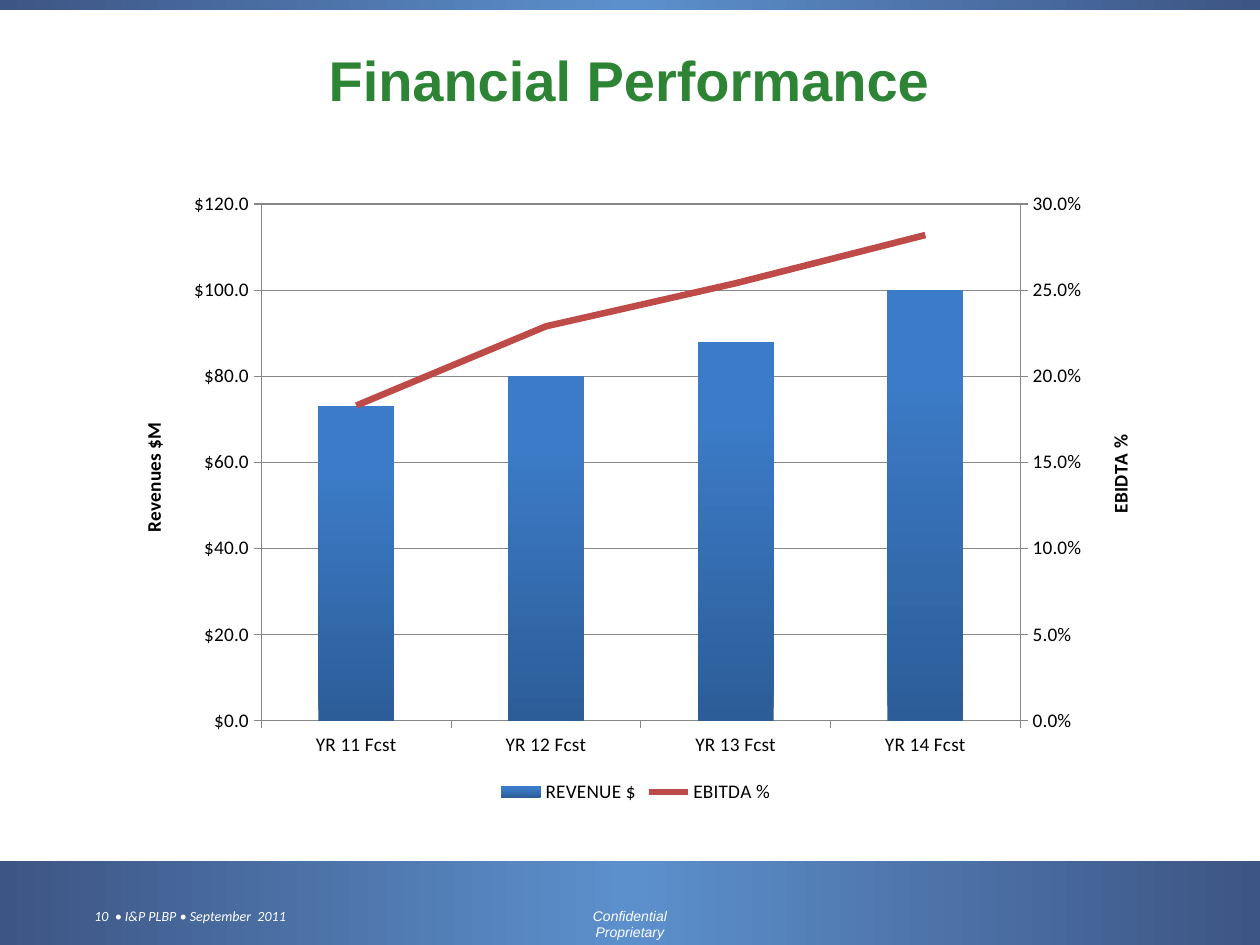
from copy import deepcopy

from lxml.etree import SubElement
from pptx import Presentation
from pptx.chart.axis import ValueAxis
from pptx.chart.data import CategoryChartData
from pptx.dml.color import RGBColor
from pptx.enum.chart import XL_CHART_TYPE, XL_LEGEND_POSITION, XL_MARKER_STYLE, XL_TICK_MARK
from pptx.enum.shapes import MSO_SHAPE
from pptx.enum.text import MSO_ANCHOR, PP_ALIGN
from pptx.oxml import parse_xml
from pptx.oxml.ns import nsdecls, qn
from pptx.util import Inches, Pt

WHITE = RGBColor(0xFF, 0xFF, 0xFF)
BLACK = RGBColor(0x00, 0x00, 0x00)
GREEN = RGBColor(0x2D, 0x84, 0x35)
NAVY = RGBColor(0x3D, 0x55, 0x84)
SKY = RGBColor(0x5C, 0x90, 0xCC)
BAR_DARK = RGBColor(0x2C, 0x5D, 0x98)
BAR_LIGHT = RGBColor(0x3C, 0x7B, 0xC7)
RED = RGBColor(0xBE, 0x4B, 0x48)
GRAY = RGBColor(0x87, 0x87, 0x87)

BAND_STOPS = [(0, NAVY), (0.5, SKY), (1, NAVY)]
BAR_STOPS = [(0, BAR_DARK), (0.8, BAR_LIGHT), (1, BAR_LIGHT)]

SECOND_AXES = [
    f"""<c:catAx {nsdecls("c")}>
      <c:axId val="5001"/><c:scaling><c:orientation val="minMax"/></c:scaling>
      <c:delete val="1"/><c:axPos val="b"/><c:crossAx val="5002"/>
      <c:crosses val="autoZero"/>
    </c:catAx>""",
    f"""<c:valAx {nsdecls("c")}>
      <c:axId val="5002"/><c:scaling><c:orientation val="minMax"/></c:scaling>
      <c:delete val="0"/><c:axPos val="r"/><c:tickLblPos val="nextTo"/>
      <c:crossAx val="5001"/><c:crosses val="max"/>
    </c:valAx>""",
]


def set_gradient(fill, element, stops, angle):
    fill.gradient()
    fill.gradient_angle = angle
    stop_list = element.xpath(".//a:gsLst")[0]
    stop_list.append(deepcopy(stop_list[-1]))
    for stop, (position, color) in zip(fill.gradient_stops, stops):
        stop.position = position
        stop.color.rgb = color


def set_layout(element, index, x, y, size=None):
    for old_layout in element.findall(qn("c:layout")):
        element.remove(old_layout)
    layout = parse_xml(f"<c:layout {nsdecls('c')}><c:manualLayout/></c:layout>")
    settings = [("xMode", "edge"), ("yMode", "edge"), ("x", x), ("y", y)]
    if size:
        settings = [("layoutTarget", "inner"), *settings, ("w", size[0]), ("h", size[1])]
    for tag, value in settings:
        SubElement(layout[0], qn(f"c:{tag}")).set("val", str(value))
    element.insert(index, layout)


class SlideBuilder:
    def __init__(self, slide, chart_font="Calibri", chart_size=11):
        self.slide = slide
        self.chart_font = chart_font
        self.chart_size = chart_size

    def band(self, top, height):
        shape = self.slide.shapes.add_shape(
            MSO_SHAPE.RECTANGLE, 0, Inches(top), Inches(10), Inches(height))
        shape.shadow.inherit = False
        shape.line.fill.background()
        set_gradient(shape.fill, shape._element, BAND_STOPS, 0)

    def text(self, text, box, size, font, color, align=PP_ALIGN.LEFT,
             anchor=MSO_ANCHOR.TOP, bold=False, italic=False):
        shape = self.slide.shapes.add_textbox(*map(Inches, box))
        frame = shape.text_frame
        frame.word_wrap = True
        frame.vertical_anchor = anchor
        frame.text = text
        paragraph = frame.paragraphs[0]
        paragraph.alignment = align
        run_font = paragraph.runs[0].font
        run_font.size, run_font.name = Pt(size), font
        run_font.bold, run_font.italic = bold, italic
        run_font.color.rgb = color

    def axis(self, axis):
        axis.format.line.color.rgb = GRAY
        axis.format.line.width = Pt(0.75)
        axis.major_tick_mark = XL_TICK_MARK.CROSS
        axis.major_tick_mark = XL_TICK_MARK.OUTSIDE
        axis.minor_tick_mark = XL_TICK_MARK.NONE

    def value_axis(self, axis, title, number_format, maximum, step, title_x, title_y):
        self.axis(axis)
        axis.minimum_scale, axis.maximum_scale = 0, maximum
        axis.major_unit = step
        axis.tick_labels.number_format = number_format
        axis.tick_labels.number_format_is_linked = False
        frame = axis.axis_title.text_frame
        frame.text = title
        font = frame.paragraphs[0].runs[0].font
        font.size, font.name, font.bold = Pt(self.chart_size), self.chart_font, True
        font.color.rgb = BLACK
        element = axis.axis_title._element
        element.xpath(".//a:bodyPr")[0].set("rot", "-5400000")
        set_layout(element, 1, title_x, title_y)

    def second_plot(self, chart):
        plot_area = chart._chartSpace.xpath(".//c:plotArea")[0]
        bar_plot = plot_area.find(qn("c:barChart"))
        series = bar_plot.findall(qn("c:ser"))[1]
        for inversion in series.findall(qn("c:invertIfNegative")):
            series.remove(inversion)
        line_plot = parse_xml(
            f'<c:lineChart {nsdecls("c")}><c:grouping val="standard"/>'
            '<c:varyColors val="0"/><c:marker val="1"/>'
            '<c:axId val="5001"/><c:axId val="5002"/></c:lineChart>')
        line_plot.insert(2, series)
        bar_plot.addnext(line_plot)
        category_axis, value_axis = map(parse_xml, SECOND_AXES)
        last_axis = plot_area.findall(qn("c:valAx"))[-1]
        last_axis.addnext(value_axis)
        value_axis.addnext(category_axis)
        set_layout(plot_area, 0, 0.14, 0.04, (0.73, 0.82))
        return ValueAxis(value_axis)

    def chart(self, box, categories, revenue, margin):
        data = CategoryChartData()
        data.categories = categories
        data.add_series("REVENUE $", revenue, '"$"#,##0.0')
        data.add_series("EBITDA %", margin, "0.0%")
        chart = self.slide.shapes.add_chart(
            XL_CHART_TYPE.COLUMN_CLUSTERED, *map(Inches, box), data).chart
        chart.has_title = False
        chart.font.name, chart.font.size = self.chart_font, Pt(self.chart_size)
        chart.font.color.rgb = BLACK
        chart.has_legend = True
        chart.legend.position = XL_LEGEND_POSITION.BOTTOM
        chart.legend.include_in_layout = False
        left_axis = chart.value_axis
        right_axis = self.second_plot(chart)
        self.axis(chart.category_axis)
        self.value_axis(left_axis, "Revenues $M", '"$"#,##0.0', 120, 20, 0.02, 0.38)
        self.value_axis(right_axis, "EBIDTA %", "0.0%", 0.3, 0.05, 0.95, 0.4)
        gridline = left_axis.major_gridlines.format.line
        gridline.color.rgb, gridline.width = GRAY, Pt(0.75)

        bar_plot, line_plot = chart.plots
        bar_plot.gap_width = 150
        bar_plot.vary_by_categories = False
        bars, line = bar_plot.series[0], line_plot.series[0]
        set_gradient(bars.format.fill, bars._element, BAR_STOPS, 90)
        line.smooth = False
        line.marker.style = XL_MARKER_STYLE.NONE
        line.format.line.color.rgb = RED
        line.format.line.width = Pt(3.75)


def main():
    presentation = Presentation()
    presentation.slide_width, presentation.slide_height = Inches(10), Inches(7.5)
    builder = SlideBuilder(presentation.slides.add_slide(presentation.slide_layouts[6]))
    builder.band(6.83, 0.67)
    builder.text("10  • I&P PLBP • September  2011", (0.65, 7.15, 2.66, 0.23),
                 8, "Calibri", WHITE, italic=True)
    builder.text("Confidential Proprietary", (4.32, 7.15, 1.36, 0.23),
                 8, "Arial", WHITE, PP_ALIGN.CENTER, italic=True)
    builder.band(0, 0.08)
    builder.text("Financial Performance", (0.08, 0.25, 9.83, 0.75), 32, "Arial", GREEN,
                 PP_ALIGN.CENTER, MSO_ANCHOR.MIDDLE, bold=True)
    builder.chart((0.92, 1.42, 8.25, 5), [f"YR {year} Fcst" for year in range(11, 15)],
                  (73, 80, 88, 100), (0.183, 0.229, 0.254, 0.282))
    presentation.save("out.pptx")


if __name__ == "__main__":
    main()
